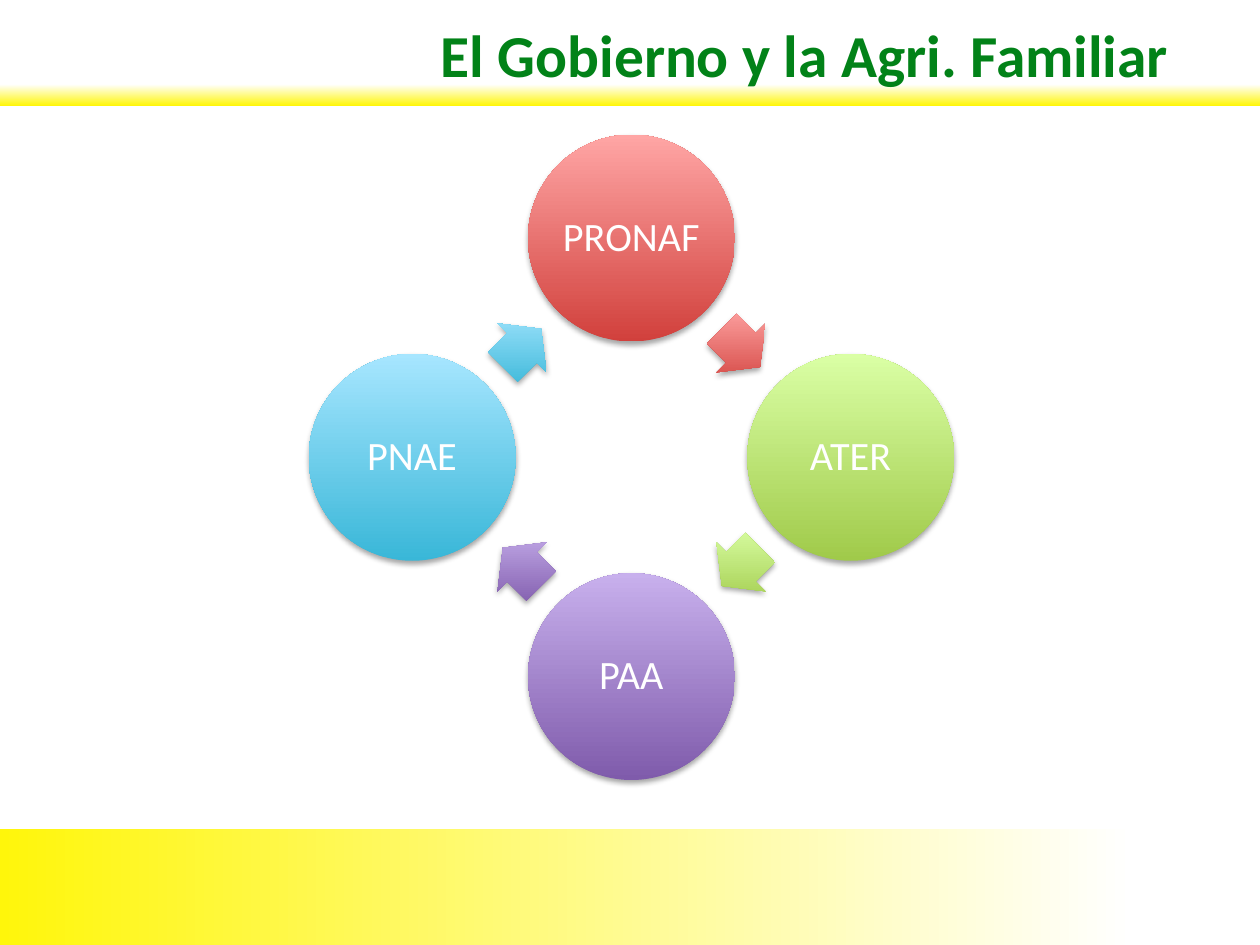
import math

import pptx
import pptx.dml.color
import pptx.enum.shapes
import pptx.enum.text
import pptx.oxml
import pptx.oxml.ns
import pptx.util

Cm = pptx.util.Cm
Pt = pptx.util.Pt
RGBColor = pptx.dml.color.RGBColor
MSO_SHAPE = pptx.enum.shapes.MSO_SHAPE
PP_ALIGN = pptx.enum.text.PP_ALIGN
MSO_ANCHOR = pptx.enum.text.MSO_ANCHOR

WHITE = RGBColor(0xFF, 0xFF, 0xFF)
YELLOW = RGBColor(0xFF, 0xF6, 0x0B)
GREEN = RGBColor(0x02, 0x82, 0x18)
RED, PINK = RGBColor(0xD1, 0x40, 0x3C), RGBColor(0xFF, 0xA6, 0xA5)
OLIVE, LIME = RGBColor(0xA0, 0xCA, 0x4A), RGBColor(0xDA, 0xFF, 0xA5)
PURPLE, LILAC = RGBColor(0x7F, 0x5B, 0xAB), RGBColor(0xC8, 0xB0, 0xED)
BLUE, SKY = RGBColor(0x39, 0xB7, 0xD8), RGBColor(0xA7, 0xE6, 0xFF)

SHADOW = (
    f'<a:outerShdw {pptx.oxml.ns.nsdecls("a")} blurRad="40000" dist="23000" '
    'dir="5400000" rotWithShape="0"><a:srgbClr val="000000">'
    '<a:alpha val="35000"/></a:srgbClr></a:outerShdw>'
)


def paint_gradient(shape, start, end, angle):
    """Fill without outline or shadow; angle runs counter-clockwise on the page."""
    shape.fill.gradient()
    shape.fill.gradient_angle = angle
    for stop, color, position in zip(shape.fill.gradient_stops, (start, end), (0, 1)):
        stop.color.rgb = color
        stop.position = position
    shape._element.spPr.find(pptx.oxml.ns.qn("a:gradFill")).set("rotWithShape", "0")
    shape.line.fill.background()
    shape.shadow.inherit = False


def add_diagram_shape(diagram, kind, center_x, center_y, width, height, dark, light):
    shape = diagram.shapes.add_shape(
        kind, Cm(center_x - width / 2), Cm(center_y - height / 2), Cm(width), Cm(height))
    paint_gradient(shape, dark, light, 90)
    effects = shape._element.spPr.find(pptx.oxml.ns.qn("a:effectLst"))
    effects.append(pptx.oxml.parse_xml(SHADOW))
    return shape


deck = pptx.Presentation()
deck.slide_width = Cm(25.4)
deck.slide_height = Cm(19.05)
page = deck.slides.add_slide(deck.slide_layouts[5])

# Yellow bands behind the title
bands = [
    (0, 1.7, 25.4, 0.43, WHITE, YELLOW, 270),
    (0, 16.71, 22.86, 2.34, YELLOW, WHITE, 0),
]
for index, (left, top, width, height, start, end, angle) in enumerate(bands):
    band = page.shapes.add_shape(
        MSO_SHAPE.RECTANGLE, Cm(left), Cm(top), Cm(width), Cm(height))
    paint_gradient(band, start, end, angle)
    page.shapes._spTree.insert(2 + index, band._element)

title = page.shapes.title
title.left, title.top, title.width, title.height = Cm(8.31), Cm(0), Cm(15.82), Cm(2.16)
title.text_frame.text = "El Gobierno y la Agri. Familiar"
title.text_frame.vertical_anchor = MSO_ANCHOR.MIDDLE
para = title.text_frame.paragraphs[0]
para.alignment = PP_ALIGN.CENTER
font = para.runs[0].font
font.name, font.size, font.bold = "Calibri", Pt(34), True
font.color.rgb = GREEN

# Cycle of programmes, clockwise from the top
CENTER_X, CENTER_Y = 12.73, 9.22
CIRCLE_ORBIT, ARROW_ORBIT = 4.42, 3.12
programmes = [
    ("PRONAF", RED, PINK),
    ("ATER", OLIVE, LIME),
    ("PAA", PURPLE, LILAC),
    ("PNAE", BLUE, SKY),
]
diagram = page.shapes.add_group_shape()
for index, (name, dark, light) in enumerate(programmes):
    turn = 90 * index
    direction = math.radians(turn - 90)
    circle = add_diagram_shape(
        diagram, MSO_SHAPE.OVAL,
        CENTER_X + CIRCLE_ORBIT * math.cos(direction),
        CENTER_Y + CIRCLE_ORBIT * math.sin(direction),
        4.17, 4.17, dark, light)
    frame = circle.text_frame
    frame.text = name
    frame.word_wrap = False
    frame.vertical_anchor = MSO_ANCHOR.MIDDLE
    frame.margin_left = frame.margin_right = Cm(0.08)
    frame.margin_top = frame.margin_bottom = Cm(0.08)
    para = frame.paragraphs[0]
    para.alignment = PP_ALIGN.CENTER
    para.line_spacing = 0.9
    font = para.runs[0].font
    font.name, font.size = "Calibri", Pt(23)
    font.color.rgb = WHITE

    direction = math.radians(turn - 45)
    arrow = add_diagram_shape(
        diagram, MSO_SHAPE.RIGHT_ARROW,
        CENTER_X + ARROW_ORBIT * math.cos(direction),
        CENTER_Y + ARROW_ORBIT * math.sin(direction),
        1.09, 1.4, dark, light)
    arrow.adjustments[0] = 0.6
    arrow.adjustments[1] = 0.5
    arrow.rotation = turn + 45

deck.save("out.pptx")
